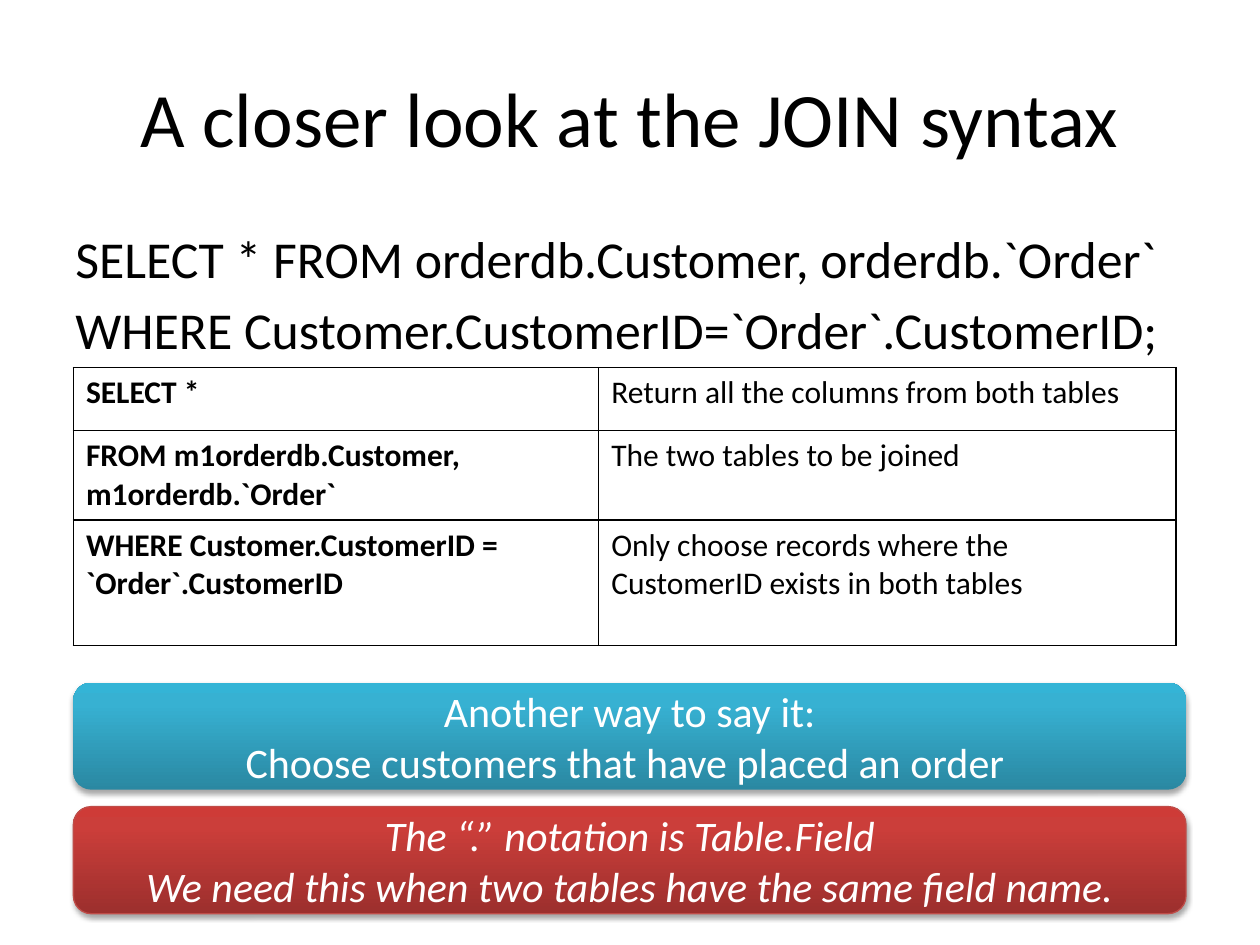
"""Build a slide that explains the parts of a SQL JOIN."""
from copy import deepcopy
from dataclasses import dataclass
from typing import Optional

from lxml.etree import SubElement
from pptx import Presentation
from pptx.dml.color import RGBColor
from pptx.enum.shapes import MSO_SHAPE
from pptx.enum.text import MSO_ANCHOR, PP_ALIGN
from pptx.oxml import parse_xml
from pptx.oxml.ns import nsdecls, qn
from pptx.slide import Slide
from pptx.text.text import TextFrame
from pptx.util import Cm, Pt


@dataclass(frozen=True)
class Theme:
    font: str = "Calibri"
    ink: str = "000000"
    light: str = "FFFFFF"
    title_size: float = 44
    query_size: float = 29.6
    table_size: float = 18
    banner_size: float = 24
    blue: tuple[str, ...] = ("2A88A2", "37B1D2", "34B4D6")
    red: tuple[str, ...] = ("9C2F2D", "CB3E3A", "CE3B37")
    red_edge: str = "BF4C48"
    stops: tuple[float, ...] = (0, 0.8, 1)


@dataclass(frozen=True)
class Box:
    left: float
    top: float
    width: float
    height: float

    def lengths(self) -> tuple[Cm, ...]:
        return Cm(self.left), Cm(self.top), Cm(self.width), Cm(self.height)


@dataclass(frozen=True)
class TextStyle:
    size: float
    color: str
    bold: bool = False
    italic: bool = False
    align: PP_ALIGN = PP_ALIGN.LEFT
    space_before: float = 0


@dataclass(frozen=True)
class Banner:
    lines: tuple[str, ...]
    gradient: tuple[str, ...]
    edge: Optional[str] = None
    italic: bool = False


THEME = Theme()
TITLE_BOX = Box(1.27, 0.76, 22.86, 3.18)
QUERY_BOX = Box(1.27, 4.45, 22.86, 2.97)
TABLE_BOX = Box(1.48, 7.41, 22.23, 5.6)
COLUMN_WIDTHS = (10.59, 11.64)
ROW_HEIGHTS = (1.27, 1.8, 2.53)
BANNER_BOX = Box(1.48, 13.76, 22.43, 2.16)
BANNER_STEP = 2.5

QUERY = (
    "SELECT * FROM orderdb.Customer, orderdb.`Order`",
    "WHERE Customer.CustomerID=`Order`.CustomerID;",
)
CLAUSES = (
    ("SELECT *", "Return all the columns from both tables"),
    ("FROM m1orderdb.Customer, m1orderdb.`Order`", "The two tables to be joined"),
    ("WHERE Customer.CustomerID = `Order`.CustomerID",
     "Only choose records where the CustomerID exists in both tables"),
)
BANNERS = (
    Banner(("Another way to say it:", "Choose customers that have placed an order "),
           THEME.blue),
    Banner(("The “.” notation is Table.Field",
            "We need this when two tables have the same field name."),
           THEME.red, THEME.red_edge, italic=True),
)


def write_lines(frame: TextFrame, lines: tuple[str, ...], style: TextStyle) -> None:
    frame.word_wrap = True
    for index, line in enumerate(lines):
        paragraph = frame.add_paragraph() if index else frame.paragraphs[0]
        paragraph.alignment = style.align
        paragraph.space_before = Pt(style.space_before)
        run = paragraph.add_run()
        run.text = line
        run.font.name = THEME.font
        run.font.size = Pt(style.size)
        run.font.bold = style.bold
        run.font.italic = style.italic
        run.font.color.rgb = RGBColor.from_string(style.color)


def add_text(slide: Slide, box: Box, lines: tuple[str, ...], style: TextStyle,
             anchor: MSO_ANCHOR) -> None:
    frame = slide.shapes.add_textbox(*box.lengths()).text_frame
    frame.vertical_anchor = anchor
    write_lines(frame, lines, style)


def add_clause_table(slide: Slide) -> None:
    table = slide.shapes.add_table(
        len(CLAUSES), len(COLUMN_WIDTHS), *TABLE_BOX.lengths()).table
    table.first_row = table.horz_banding = False
    for column, width in zip(table.columns, COLUMN_WIDTHS):
        column.width = Cm(width)
    for row, height, texts in zip(table.rows, ROW_HEIGHTS, CLAUSES):
        row.height = Cm(height)
        for index, (cell, text) in enumerate(zip(row.cells, texts)):
            cell.fill.background()
            properties = cell._tc.get_or_add_tcPr()
            for position, side in enumerate(("lnL", "lnR", "lnT", "lnB")):
                properties.insert(position, parse_xml(
                    f'<a:{side} {nsdecls("a")} w="{Pt(1)}"><a:solidFill>'
                    f'<a:srgbClr val="{THEME.ink}"/></a:solidFill></a:{side}>'))
            style = TextStyle(THEME.table_size, THEME.ink, bold=index == 0)
            write_lines(cell.text_frame, (text,), style)


def add_banner(slide: Slide, box: Box, banner: Banner) -> None:
    shape = slide.shapes.add_shape(MSO_SHAPE.ROUNDED_RECTANGLE, *box.lengths())
    shape.fill.gradient()
    shape.fill.gradient_angle = 90
    properties = shape._element.spPr
    stop_list = properties.find(".//" + qn("a:gsLst"))
    stop_list.append(deepcopy(stop_list[-1]))
    for stop, color, position in zip(
            shape.fill.gradient_stops, banner.gradient, THEME.stops):
        stop.color.rgb = RGBColor.from_string(color)
        stop.position = position
    if banner.edge:
        shape.line.color.rgb = RGBColor.from_string(banner.edge)
        shape.line.width = Pt(0.75)
    else:
        shape.line.fill.background()
    shape.shadow.inherit = False
    shadow = SubElement(properties.find(qn("a:effectLst")), qn("a:outerShdw"),
                        blurRad=str(Pt(3.1)), dist=str(Pt(1.8)),
                        dir="5400000", rotWithShape="0")
    color = SubElement(shadow, qn("a:srgbClr"), val=THEME.ink)
    SubElement(color, qn("a:alpha"), val="35000")
    shape.text_frame.vertical_anchor = MSO_ANCHOR.MIDDLE
    write_lines(shape.text_frame, banner.lines, TextStyle(
        THEME.banner_size, THEME.light, italic=banner.italic, align=PP_ALIGN.CENTER))


def main() -> None:
    presentation = Presentation()
    presentation.slide_width, presentation.slide_height = Cm(25.4), Cm(19.05)
    slide = presentation.slides.add_slide(presentation.slide_layouts[6])
    add_text(slide, TITLE_BOX, ("A closer look at the JOIN syntax",),
             TextStyle(THEME.title_size, THEME.ink, align=PP_ALIGN.CENTER),
             MSO_ANCHOR.MIDDLE)
    add_text(slide, QUERY_BOX, QUERY,
             TextStyle(THEME.query_size, THEME.ink, space_before=5), MSO_ANCHOR.TOP)
    add_clause_table(slide)
    for index, banner in enumerate(BANNERS):
        box = Box(BANNER_BOX.left, BANNER_BOX.top + index * BANNER_STEP,
                  BANNER_BOX.width, BANNER_BOX.height)
        add_banner(slide, box, banner)
    presentation.save("out.pptx")


if __name__ == "__main__":
    main()
